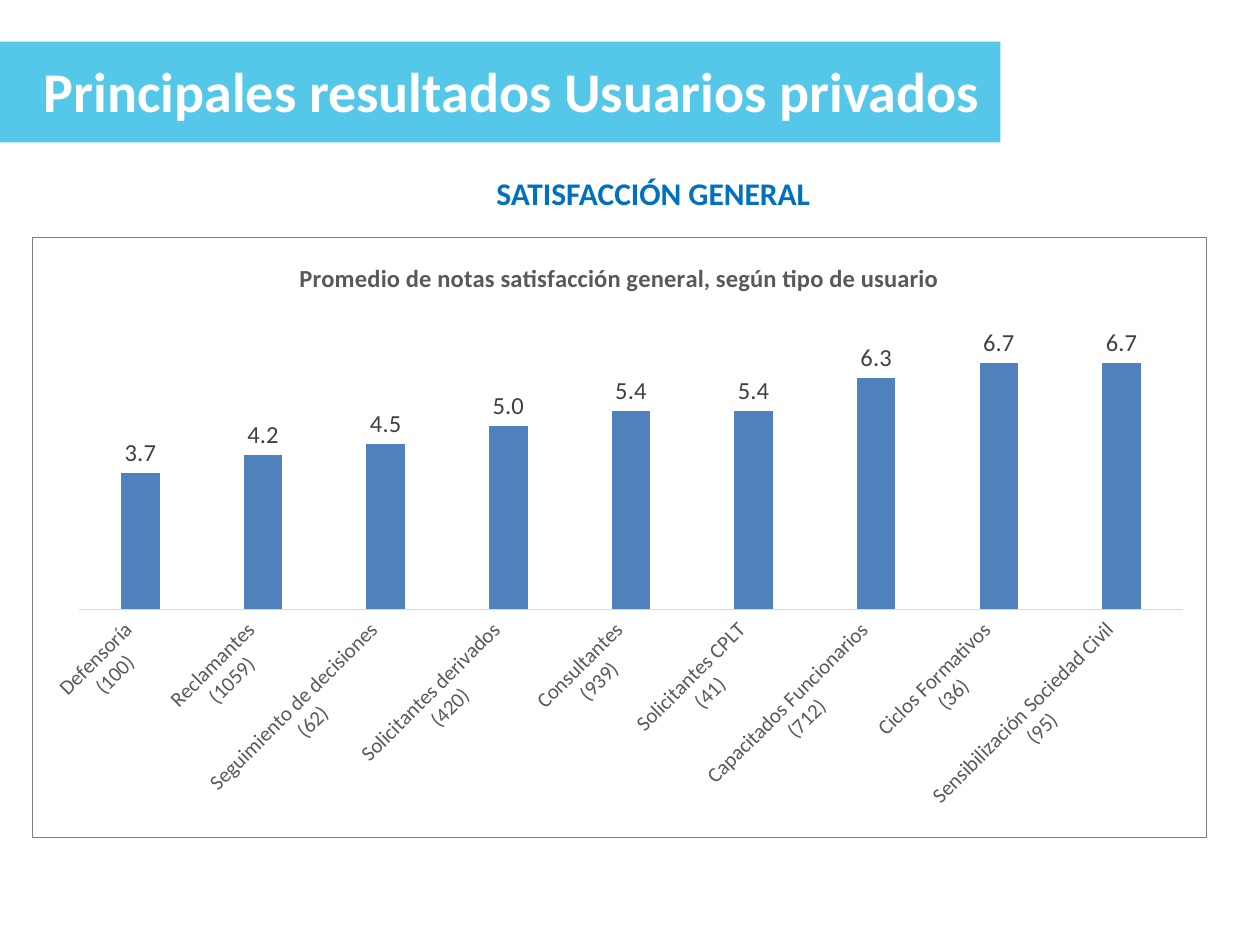
from dataclasses import dataclass

from pptx import Presentation
from pptx.chart.data import CategoryChartData
from pptx.dml.color import RGBColor
from pptx.enum.chart import XL_CHART_TYPE, XL_LABEL_POSITION, XL_TICK_MARK
from pptx.enum.shapes import MSO_SHAPE
from pptx.enum.text import MSO_AUTO_SIZE, PP_ALIGN
from pptx.oxml import parse_xml
from pptx.oxml.ns import nsdecls
from pptx.util import Inches, Pt


@dataclass(frozen=True)
class Theme:
    face: str = "Calibri"
    band: str = "55C8E9"
    white: str = "FFFFFF"
    blue: str = "0070C0"
    bar: str = "4F81BD"
    label: str = "404040"
    gray: str = "595959"
    axis: str = "D9D9D9"
    frame: str = "808080"
    head: int = 32
    sub: int = 18
    mid: int = 14
    small: int = 12
    line: float = 0.75


THEME = Theme()

# User type, number of replies, mean grade
GRADES = [
    ("Defensoría", 100, 3.7),
    ("Reclamantes", 1059, 4.2),
    ("Seguimiento de decisiones", 62, 4.5),
    ("Solicitantes derivados", 420, 5.0),
    ("Consultantes", 939, 5.4),
    ("Solicitantes CPLT", 41, 5.4),
    ("Capacitados Funcionarios", 712, 6.3),
    ("Ciclos Formativos", 36, 6.7),
    ("Sensibilización Sociedad Civil", 95, 6.7),
]


def style(font, size, color, bold=False):
    font.name = THEME.face
    font.size = Pt(size)
    font.bold = bold
    font.color.rgb = RGBColor.from_string(color)


def add_band(slide, x, y, w, h):
    band = slide.shapes.add_shape(
        MSO_SHAPE.RECTANGLE, Inches(x), Inches(y), Inches(w), Inches(h))
    band.shadow.inherit = False
    band.fill.solid()
    band.fill.fore_color.rgb = RGBColor.from_string(THEME.band)
    band.line.fill.background()


def add_text(slide, text, x, y, w, h, size, color):
    box = slide.shapes.add_textbox(Inches(x), Inches(y), Inches(w), Inches(h))
    frame = box.text_frame
    frame.word_wrap = False
    frame.auto_size = MSO_AUTO_SIZE.SHAPE_TO_FIT_TEXT
    para = frame.paragraphs[0]
    para.alignment = PP_ALIGN.LEFT
    run = para.add_run()
    run.text = text
    style(run.font, size, color, bold=True)


def set_frame(chart):
    # Thin outline around the whole chart
    chart.element.xpath("c:chart")[0].addnext(parse_xml(
        f'<c:spPr {nsdecls("c", "a")}><a:noFill/>'
        f'<a:ln w="{Pt(THEME.line)}"><a:solidFill>'
        f'<a:srgbClr val="{THEME.frame}"/></a:solidFill></a:ln></c:spPr>'))


def set_plot(chart, x, y, w, h):
    # Inner plot area, as shares of the chart size
    area = chart.element.xpath("c:chart/c:plotArea")[0]
    for old in area.xpath("c:layout"):
        area.remove(old)
    sizes = "".join(f'<c:{key} val="{val}"/>'
                    for key, val in zip("xywh", (x, y, w, h)))
    area.insert(0, parse_xml(
        f'<c:layout {nsdecls("c")}><c:manualLayout>'
        '<c:layoutTarget val="inner"/><c:xMode val="edge"/>'
        f'<c:yMode val="edge"/>{sizes}</c:manualLayout></c:layout>'))


def add_bars(slide, title, x, y, w, h):
    data = CategoryChartData(number_format="0.0")
    data.categories = [f"{name} \n({count})" for name, count, _ in GRADES]
    data.add_series("Series 1", [grade for _, _, grade in GRADES])
    chart = slide.shapes.add_chart(
        XL_CHART_TYPE.COLUMN_CLUSTERED, Inches(x), Inches(y),
        Inches(w), Inches(h), data).chart
    chart.has_legend = False
    style(chart.font, THEME.small, THEME.gray)

    # Title
    run = chart.chart_title.text_frame.paragraphs[0].add_run()
    run.text = title
    style(run.font, THEME.mid, THEME.gray, bold=True)
    chart.chart_title.include_in_layout = False

    # Axes
    cat = chart.category_axis
    cat.major_tick_mark = cat.minor_tick_mark = XL_TICK_MARK.NONE
    cat.format.line.width = Pt(THEME.line)
    cat.format.line.color.rgb = RGBColor.from_string(THEME.axis)
    style(cat.tick_labels.font, THEME.small, THEME.gray)
    body = chart.element.xpath(".//c:catAx/c:txPr/a:bodyPr")[0]
    body.set("rot", "-2700000")
    body.set("vert", "horz")
    val = chart.value_axis
    val.minimum_scale, val.maximum_scale = 0, 8
    val.has_major_gridlines = False
    val.visible = False

    # Bars and their values
    plot = chart.plots[0]
    plot.gap_width, plot.overlap = 219, -27
    plot.vary_by_categories = False
    fill = plot.series[0].format.fill
    fill.solid()
    fill.fore_color.rgb = RGBColor.from_string(THEME.bar)
    labels = plot.series[0].data_labels
    labels.show_value = True
    labels.position = XL_LABEL_POSITION.OUTSIDE_END
    labels.number_format = "0.0"
    labels.number_format_is_linked = False
    style(labels.font, THEME.mid, THEME.label)

    set_plot(chart, 0.04, 0.13, 0.94, 0.49)
    set_frame(chart)


def main():
    deck = Presentation()
    deck.slide_width, deck.slide_height = Inches(10), Inches(7.5)
    slide = deck.slides.add_slide(deck.slide_layouts[6])
    add_text(slide, "SATISFACCIÓN GENERAL",
             3.84, 1.33, 2.71, 0.4, THEME.sub, THEME.blue)
    add_bars(slide,
             "Promedio de notas satisfacción general, según tipo de usuario",
             0.25, 1.88, 9.33, 4.77)
    add_band(slide, 0, 0.33, 7.94, 0.8)
    add_text(slide, "Principales resultados Usuarios privados",
             0.25, 0.4, 7.69, 0.64, THEME.head, THEME.white)
    deck.save("out.pptx")


if __name__ == "__main__":
    main()
